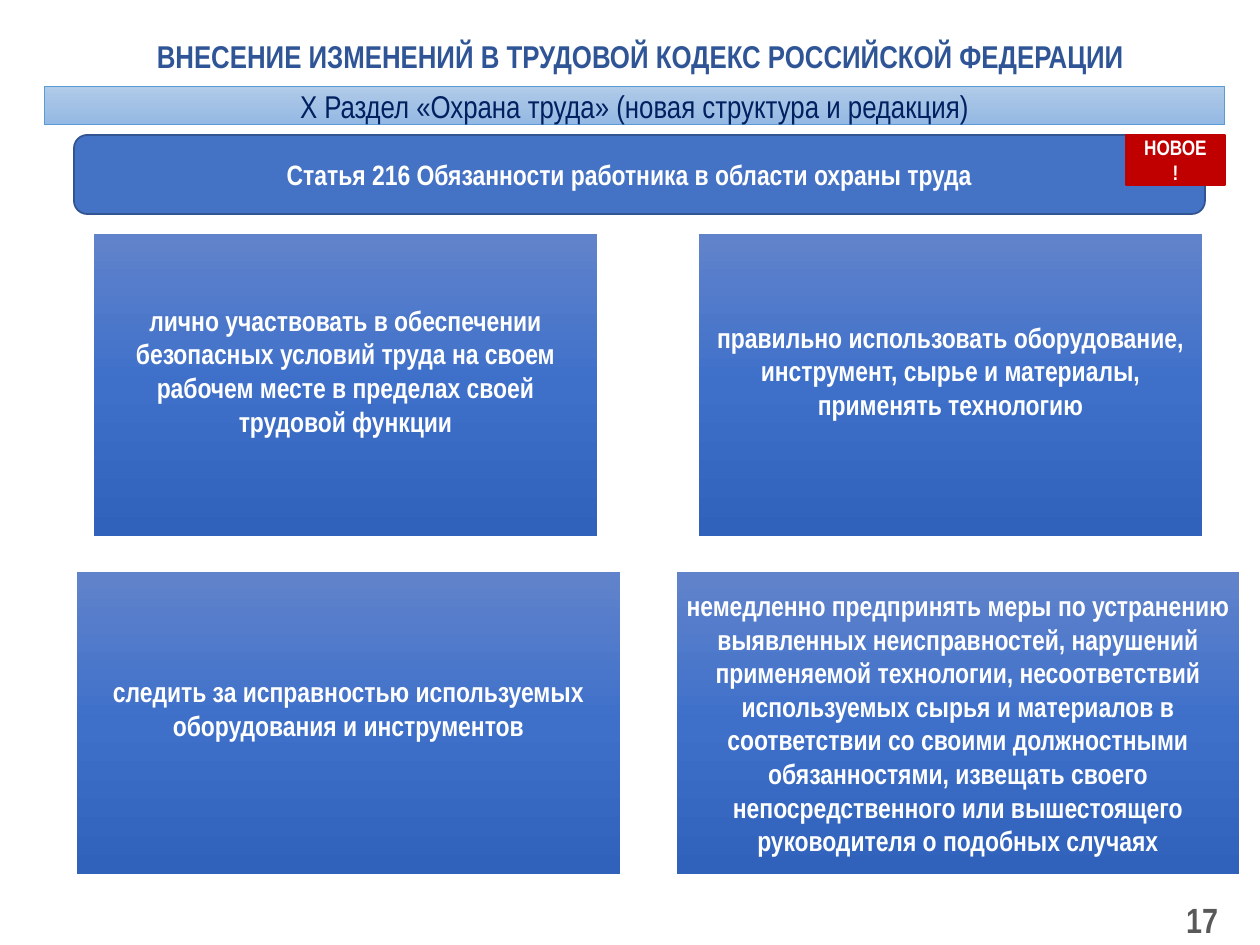
import copy

import pptx
import pptx.dml.color
import pptx.enum.shapes
import pptx.enum.text
import pptx.oxml.ns
import pptx.util

PX_PER_INCH = 126
FONT = "Arial Narrow"
CARD_GRADIENT = ("6183CB", "3E70CA", "3062BB")
SECTION_GRADIENT = ("B1CBE9", "A3C1E5", "93B9E4")
SHAPES = pptx.enum.shapes.MSO_SHAPE
ALIGN = pptx.enum.text.PP_ALIGN

CARD_INSET = 8
CARD_HEIGHT = 302
CARD_LIFT = 29  # extra bottom inset that raises the shorter duties
DUTIES = [  # left, top, width, extra bottom inset, wording
    (94, 234, 503, CARD_LIFT,
     "лично участвовать в обеспечении безопасных условий труда на своем "
     "рабочем месте в пределах своей трудовой функции"),
    (699, 234, 503, CARD_LIFT,
     "правильно использовать оборудование, инструмент, сырье и материалы, "
     "применять технологию"),
    (77, 572, 543, CARD_LIFT,
     "следить за исправностью используемых оборудования и инструментов"),
    (677, 572, 562, 0,
     "немедленно предпринять меры по устранению выявленных неисправностей, "
     "нарушений применяемой технологии, несоответствий используемых сырья и "
     "материалов в соответствии со своими должностными обязанностями, "
     "извещать своего непосредственного или вышестоящего руководителя о "
     "подобных случаях"),
]


def px(length):
    return pptx.util.Emu(round(length * 914400 / PX_PER_INCH))


def rgb(hex_color):
    return pptx.dml.color.RGBColor.from_string(hex_color)


def write(shape, text, size, color, bold=True, align=ALIGN.CENTER,
          insets=(13, 6, 13, 6)):
    """Put one formatted paragraph in a shape; insets are left, top, right, bottom."""
    frame = shape.text_frame
    frame.text = text
    frame.word_wrap = True
    frame.auto_size = pptx.enum.text.MSO_AUTO_SIZE.NONE
    frame.vertical_anchor = pptx.enum.text.MSO_ANCHOR.MIDDLE
    (frame.margin_left, frame.margin_top,
     frame.margin_right, frame.margin_bottom) = map(px, insets)
    paragraph = frame.paragraphs[0]
    paragraph.alignment = align
    font = paragraph.runs[0].font
    font.name, font.size, font.bold = FONT, pptx.util.Pt(size), bold
    font.color.rgb = rgb(color)


def fill_gradient(shape, colors):
    """Fill from top to bottom with three evenly spaced colours."""
    shape.fill.gradient()
    shape.fill.gradient_angle = 270
    stop_list = shape._element.spPr.find(".//" + pptx.oxml.ns.qn("a:gsLst"))
    stop_list.insert(1, copy.deepcopy(stop_list[0]))
    for index, (stop, color) in enumerate(zip(shape.fill.gradient_stops, colors)):
        stop.position = index / 2
        stop.color.rgb = rgb(color)


def add_box(slide, kind, box, fill, line=None, line_width=1):
    """Add a shape; fill is one hex colour or a tuple of gradient colours."""
    shape = slide.shapes.add_shape(kind, *map(px, box))
    shape.shadow.inherit = False
    if isinstance(fill, tuple):
        fill_gradient(shape, fill)
    else:
        shape.fill.solid()
        shape.fill.fore_color.rgb = rgb(fill)
    if line:
        shape.line.color.rgb = rgb(line)
        shape.line.width = pptx.util.Pt(line_width)
    else:
        shape.line.fill.background()
    return shape


def add_title(slide, text):
    title = slide.shapes.title
    title.left, title.top, title.width, title.height = map(px, (105, 16, 1071, 80))
    write(title, text, 18, "2F5597")


def add_duty(slide, left, top, width, lift, text):
    card = add_box(slide, SHAPES.RECTANGLE, (left, top, width, CARD_HEIGHT),
                   CARD_GRADIENT)
    write(card, text, 16, "FFFFFF",
          insets=(CARD_INSET, CARD_INSET, CARD_INSET, CARD_INSET + lift))


def main():
    presentation = pptx.Presentation()
    presentation.slide_width = pptx.util.Inches(10)
    presentation.slide_height = pptx.util.Inches(7.5)
    slide = presentation.slides.add_slide(presentation.slide_layouts[5])

    # Page number and title
    page_number = slide.shapes.add_textbox(*map(px, (937, 895, 294, 50)))
    write(page_number, "17", 20, "595959", align=ALIGN.RIGHT)
    add_title(slide, "ВНЕСЕНИЕ ИЗМЕНЕНИЙ В ТРУДОВОЙ КОДЕКС РОССИЙСКОЙ ФЕДЕРАЦИИ")

    # Article heading, set slightly left of centre to clear the badge
    article = add_box(slide, SHAPES.ROUNDED_RECTANGLE, (74, 135, 1131, 79),
                      "4472C4", "325491")
    write(article, "Статья 216 Обязанности работника в области охраны труда",
          16, "FFFFFF", insets=(13, 6, 33, 6))

    # Duties of the worker
    for duty in DUTIES:
        add_duty(slide, *duty)

    # Badge and section band
    badge = add_box(slide, SHAPES.RECTANGLE, (1126, 135, 99, 50), "C00000", "C00000")
    write(badge, "НОВОЕ !", 12, "FFFFFF")
    section = add_box(slide, SHAPES.RECTANGLE, (44, 86, 1181, 39),
                      SECTION_GRADIENT, "5B9BD5", 0.5)
    write(section, "Х Раздел «Охрана труда» (новая структура и редакция)",
          18, "002060", bold=False)

    presentation.save("out.pptx")


if __name__ == "__main__":
    main()
